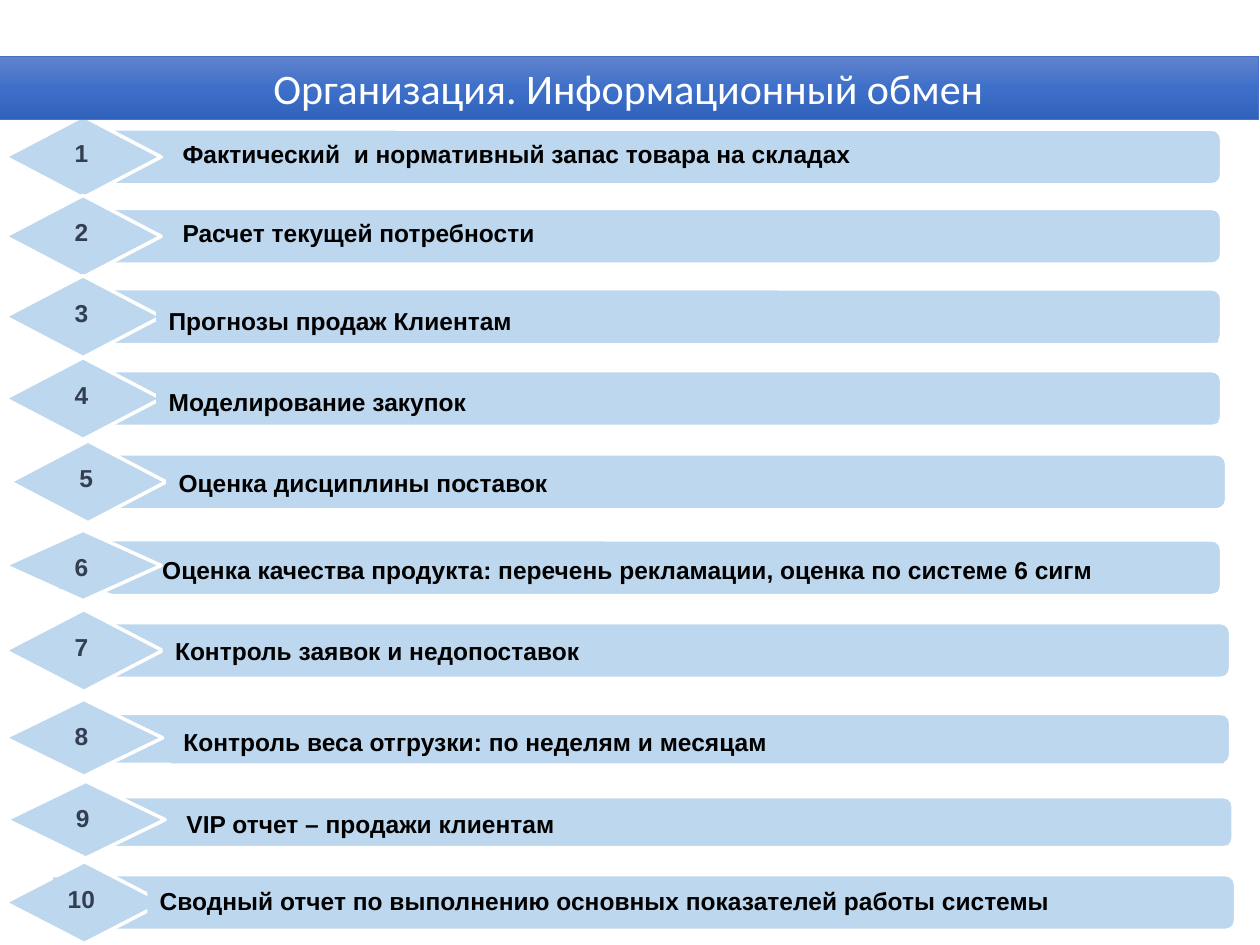
"""Build the information exchange slide: a title band above ten numbered rows."""
from copy import deepcopy
from dataclasses import dataclass

from pptx import Presentation
from pptx.dml.color import RGBColor
from pptx.enum.shapes import MSO_SHAPE as Preset
from pptx.enum.text import MSO_ANCHOR as Anchor, MSO_AUTO_SIZE as AutoSize, PP_ALIGN as Align
from pptx.shapes.autoshape import Shape
from pptx.shapes.shapetree import GroupShapes
from pptx.slide import Slide
from pptx.util import Cm, Pt


@dataclass(frozen=True)
class Theme:
    panel: RGBColor = RGBColor.from_string("BDD7EE")
    outline: RGBColor = RGBColor.from_string("FFFFFF")
    number: RGBColor = RGBColor.from_string("333F50")
    caption: RGBColor = RGBColor.from_string("000000")
    title: RGBColor = RGBColor.from_string("FFFFFF")
    title_line: RGBColor = RGBColor.from_string("4472C4")
    title_gradient: tuple[str, ...] = ("6183CB", "3E70CA", "3062BB")
    title_font: str = "Calibri"
    row_font: str = "Arial"
    title_size: Pt = Pt(24)
    row_size: Pt = Pt(14)


@dataclass(frozen=True)
class Box:
    left: float
    top: float
    width: float
    height: float


@dataclass(frozen=True)
class Row:
    caption: str
    diamond_top: float
    bar_top: float
    caption_left: float
    caption_top: float
    caption_width: float
    left: float = 0.1
    diamond_width: float = 3.15
    diamond_height: float = 1.65
    bar_width: float = 22.53
    bar_height: float = 1.09
    caption_behind: bool = False


THEME = Theme()
TITLE = "Организация. Информационный обмен"
TITLE_BOX = Box(-0.03, 1.14, 25.4, 1.27)
BAR_OFFSET = 1.98
NUMBER_CENTRE = 1.54
NUMBER_DROP = 0.32
TEXT_HEIGHT = 0.86
ROWS = (
    Row("Фактический  и нормативный запас товара на складах", 2.34, 2.62, 3.43, 2.67, 18.85),
    Row("Расчет текущей потребности", 3.94, 4.22, 3.43, 4.27, 18.85),
    Row("Прогнозы продаж Клиентам", 5.56, 5.84, 3.15, 6.05, 21.41),
    Row("Моделирование закупок", 7.21, 7.49, 3.15, 7.67, 21.41),
    Row("Оценка дисциплины поставок", 8.89, 9.17, 3.35, 9.32, 17.78, left=0.2),
    Row("Оценка качества продукта: перечень рекламации, оценка по системе 6 сигм",
        10.69, 10.9, 3.02, 11.07, 21.54, diamond_height=1.42, caption_behind=True),
    Row("Контроль заявок и недопоставок", 12.29, 12.57, 3.28, 12.7, 17.93,
        diamond_width=3.18, bar_width=22.71),
    Row("Контроль веса отгрузки: по неделям и месяцам", 14.1, 14.4, 3.45, 14.53, 21.23,
        diamond_width=3.18, diamond_height=1.55, bar_width=22.71, bar_height=0.99),
    Row("VIP отчет – продажи клиентам", 15.75, 16.08, 3.51, 16.18, 21.26, left=0.13,
        diamond_width=3.2, diamond_height=1.55, bar_width=22.73, bar_height=0.99),
    Row("Сводный отчет по выполнению основных показателей работы системы",
        17.37, 17.65, 2.97, 17.73, 21.84, diamond_width=3.2, bar_width=22.81),
)


def add_panel(shapes: GroupShapes, preset: Preset, box: Box, line_width: float = 0) -> Shape:
    shape = shapes.add_shape(preset, Cm(box.left), Cm(box.top), Cm(box.width), Cm(box.height))
    shape.shadow.inherit = False
    shape.fill.solid()
    shape.fill.fore_color.rgb = THEME.panel
    if line_width:
        shape.line.color.rgb = THEME.outline
        shape.line.width = Pt(line_width)
    else:
        shape.line.fill.background()
    return shape


def add_label(shapes: GroupShapes, text: str, box: Box, color: RGBColor, align: Align) -> None:
    frame = add_panel(shapes, Preset.RECTANGLE, box).text_frame
    frame.word_wrap = True
    frame.auto_size = AutoSize.SHAPE_TO_FIT_TEXT
    frame.vertical_anchor = Anchor.TOP
    paragraph = frame.paragraphs[0]
    paragraph.text = text
    paragraph.alignment = align
    font = paragraph.font
    font.name, font.size, font.bold = THEME.row_font, THEME.row_size, True
    font.color.rgb = color


def add_row(slide: Slide, number: int, row: Row) -> None:
    shapes = slide.shapes.add_group_shape().shapes
    bar = Box(row.left + BAR_OFFSET, row.bar_top, row.bar_width, row.bar_height)
    diamond = Box(row.left, row.diamond_top, row.diamond_width, row.diamond_height)
    caption = Box(row.caption_left, row.caption_top, row.caption_width, TEXT_HEIGHT)
    number_width = 0.89 if number < 10 else 1.14
    number_box = Box(row.left + NUMBER_CENTRE - number_width / 2,
                     row.diamond_top + NUMBER_DROP, number_width, TEXT_HEIGHT)

    add_panel(shapes, Preset.ROUNDED_RECTANGLE, bar, 1)
    if row.caption_behind:
        add_label(shapes, row.caption, caption, THEME.caption, Align.LEFT)
    add_panel(shapes, Preset.DIAMOND, diamond, 2)
    add_label(shapes, str(number), number_box, THEME.number, Align.CENTER)
    if not row.caption_behind:
        add_label(shapes, row.caption, caption, THEME.caption, Align.LEFT)


def format_title(slide: Slide) -> None:
    title = slide.shapes.title
    title.left, title.top = Cm(TITLE_BOX.left), Cm(TITLE_BOX.top)
    title.width, title.height = Cm(TITLE_BOX.width), Cm(TITLE_BOX.height)
    title.fill.gradient()
    title.fill.gradient_angle = 270
    first_stop = title.element.xpath(".//a:gs")[0]
    first_stop.addnext(deepcopy(first_stop))
    stops = title.fill.gradient_stops
    for index, (stop, color) in enumerate(zip(stops, THEME.title_gradient)):
        stop.position = index / (len(THEME.title_gradient) - 1)
        stop.color.rgb = RGBColor.from_string(color)
    title.line.color.rgb = THEME.title_line
    title.line.width = Pt(0.5)

    frame = title.text_frame
    frame.auto_size = AutoSize.NONE
    frame.vertical_anchor = Anchor.MIDDLE
    paragraph = frame.paragraphs[0]
    paragraph.text = TITLE
    paragraph.alignment = Align.CENTER
    font = paragraph.font
    font.name, font.size = THEME.title_font, THEME.title_size
    font.color.rgb = THEME.title
    title.element.getparent().append(title.element)


def main() -> None:
    presentation = Presentation()
    presentation.slide_width, presentation.slide_height = Cm(25.4), Cm(19.05)
    slide = presentation.slides.add_slide(presentation.slide_layouts[5])
    for number, row in enumerate(ROWS, start=1):
        add_row(slide, number, row)
    format_title(slide)
    presentation.save("out.pptx")


if __name__ == "__main__":
    main()
